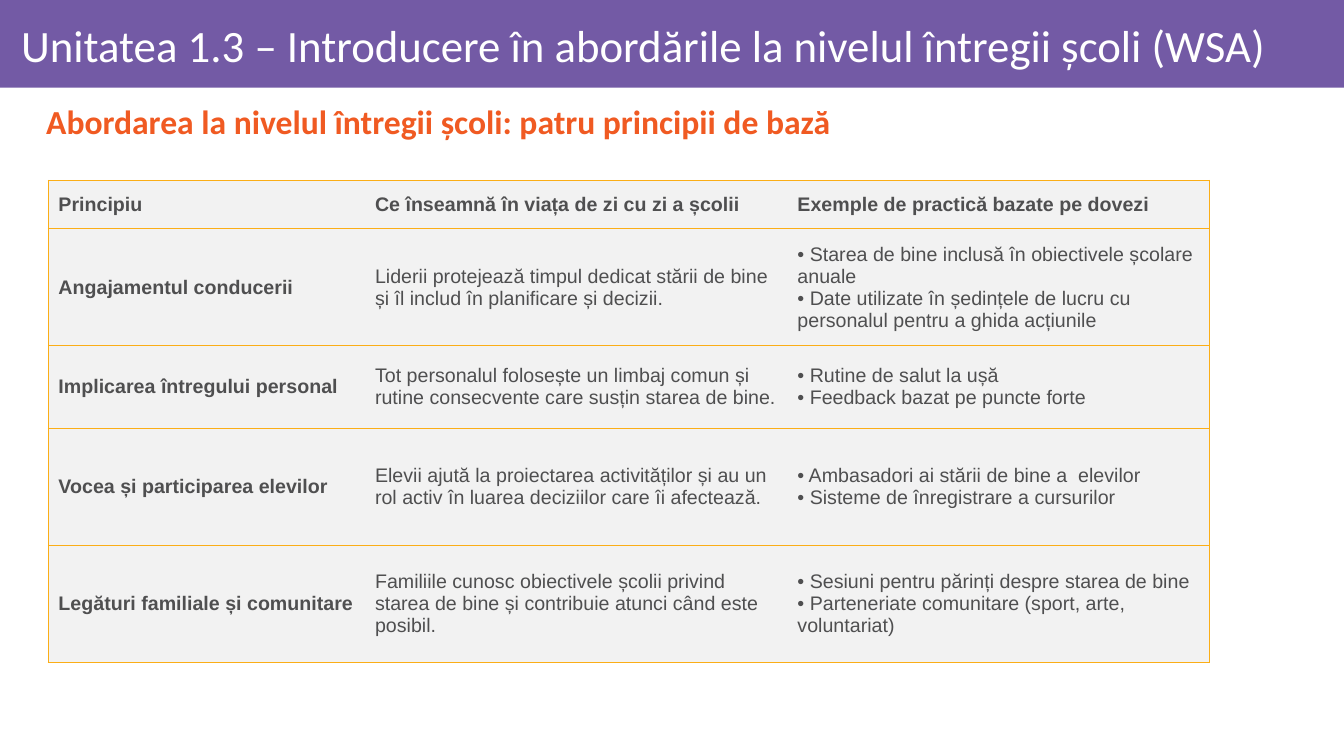
"""Build a slide with a table of the four whole-school principles."""
import pptx
import pptx.dml.color
import pptx.enum.shapes
import pptx.enum.text
import pptx.oxml
import pptx.oxml.ns
import pptx.util

Inches, Pt = pptx.util.Inches, pptx.util.Pt
MIDDLE = pptx.enum.text.MSO_ANCHOR.MIDDLE
ALIGN = pptx.enum.text.PP_ALIGN
HUES = {"banner": "735AA5", "title": "FFFFFF", "heading": "F05A22",
        "text": "4F4F50", "cell": "F2F2F2", "border": "FBAE17"}


def color(name):
    return pptx.dml.color.RGBColor.from_string(HUES[name])


def write(para, text, face, size, hue, bold=False):
    run = para.add_run()
    run.text = text
    font = run.font
    font.name, font.size, font.bold = face, Pt(size), bold
    font.color.rgb = color(hue)


deck = pptx.Presentation()
deck.slide_width, deck.slide_height = Inches(13.33), Inches(7.5)
slide = deck.slides.add_slide(deck.slide_layouts[5])
shapes = slide.shapes
title = shapes.title

banner = shapes.add_shape(pptx.enum.shapes.MSO_SHAPE.RECTANGLE,
                          0, 0, deck.slide_width, Inches(0.87))
banner.shadow.inherit = False
banner.fill.solid()
banner.fill.fore_color.rgb = color("banner")
banner.line.fill.background()
title.element.addprevious(banner.element)

title.left, title.top = Inches(0.11), Inches(0.09)
title.width, title.height = Inches(13.06), Inches(0.78)
frame = title.text_frame
frame.auto_size = pptx.enum.text.MSO_AUTO_SIZE.NONE
frame.word_wrap = True
frame.vertical_anchor = MIDDLE
frame.margin_left = Inches(0.1)
frame.margin_right = frame.margin_top = frame.margin_bottom = Inches(0.06)
para = frame.paragraphs[0]
para.alignment = ALIGN.LEFT
para.line_spacing = 0.9
write(para, "Unitatea 1.3 – Introducere în abordările la nivelul întregii școli (WSA)",
      "Calibri", 32, "title")

heading = shapes.add_textbox(title.left, Inches(0.93), title.width, Inches(0.6))
frame = heading.text_frame
frame.word_wrap = True
frame.vertical_anchor = MIDDLE
para = frame.paragraphs[0]
para.alignment = ALIGN.JUSTIFY
para.line_spacing = 0.9
para.space_before = Pt(10)
props = para._p.get_or_add_pPr()
props.set("marL", str(Inches(0.5)))
props.set("indent", str(-Inches(0.25)))
write(para, "Abordarea la nivelul întregii școli: patru principii de bază",
      "Calibri", 24, "heading", True)

ROWS = [
    ("Principiu", "Ce înseamnă în viața de zi cu zi a școlii",
     "Exemple de practică bazate pe dovezi"),
    ("Angajamentul conducerii",
     "Liderii protejează timpul dedicat stării de bine și îl includ în planificare și decizii.",
     "• Starea de bine inclusă în obiectivele școlare anuale\n"
     "• Date utilizate în ședințele de lucru cu personalul pentru a ghida acțiunile"),
    ("Implicarea întregului personal",
     "Tot personalul folosește un limbaj comun și rutine consecvente care susțin starea de bine.",
     "• Rutine de salut la ușă\n• Feedback bazat pe puncte forte"),
    ("Vocea și participarea elevilor",
     "Elevii ajută la proiectarea activităților și au un rol activ în luarea deciziilor "
     "care îi afectează.",
     "• Ambasadori ai stării de bine a  elevilor\n• Sisteme de înregistrare a cursurilor"),
    ("Legături familiale și comunitare",
     "Familiile cunosc obiectivele școlii privind starea de bine și contribuie atunci când "
     "este posibil.",
     "• Sesiuni pentru părinți despre starea de bine\n"
     "• Parteneriate comunitare (sport, arte, voluntariat)"),
]
WIDTHS = [3.14, 4.19, 4.19]
HEIGHTS = [0.48, 1.16, 0.82, 1.16, 1.16]

table = shapes.add_table(len(ROWS), len(WIDTHS), Inches(0.48), Inches(1.79),
                         Inches(sum(WIDTHS)), Inches(sum(HEIGHTS))).table
table.first_row = table.horz_banding = False
for col, width in zip(table.columns, WIDTHS):
    col.width = Inches(width)
for row, height in zip(table.rows, HEIGHTS):
    row.height = Inches(height)

for r, texts in enumerate(ROWS):
    for c, text in enumerate(texts):
        cell = table.cell(r, c)
        cell.vertical_anchor = MIDDLE
        cell.fill.solid()
        cell.fill.fore_color.rgb = color("cell")
        for n, line in enumerate(text.split("\n")):
            frame = cell.text_frame
            para = frame.add_paragraph() if n else frame.paragraphs[0]
            write(para, line, "Arial", 14, "text", r == 0 or c == 0)
        edges = {"L": c == 0, "R": c == len(WIDTHS) - 1, "T": True, "B": True}
        for n, (side, shown) in enumerate(edges.items()):
            paint = (f'<a:solidFill><a:srgbClr val="{HUES["border"]}"/></a:solidFill>'
                     if shown else "<a:noFill/>")
            edge = pptx.oxml.parse_xml(
                f'<a:ln{side} {pptx.oxml.ns.nsdecls("a")} w="{Pt(1)}">{paint}</a:ln{side}>')
            cell._tc.get_or_add_tcPr().insert(n, edge)

deck.save("out.pptx")
